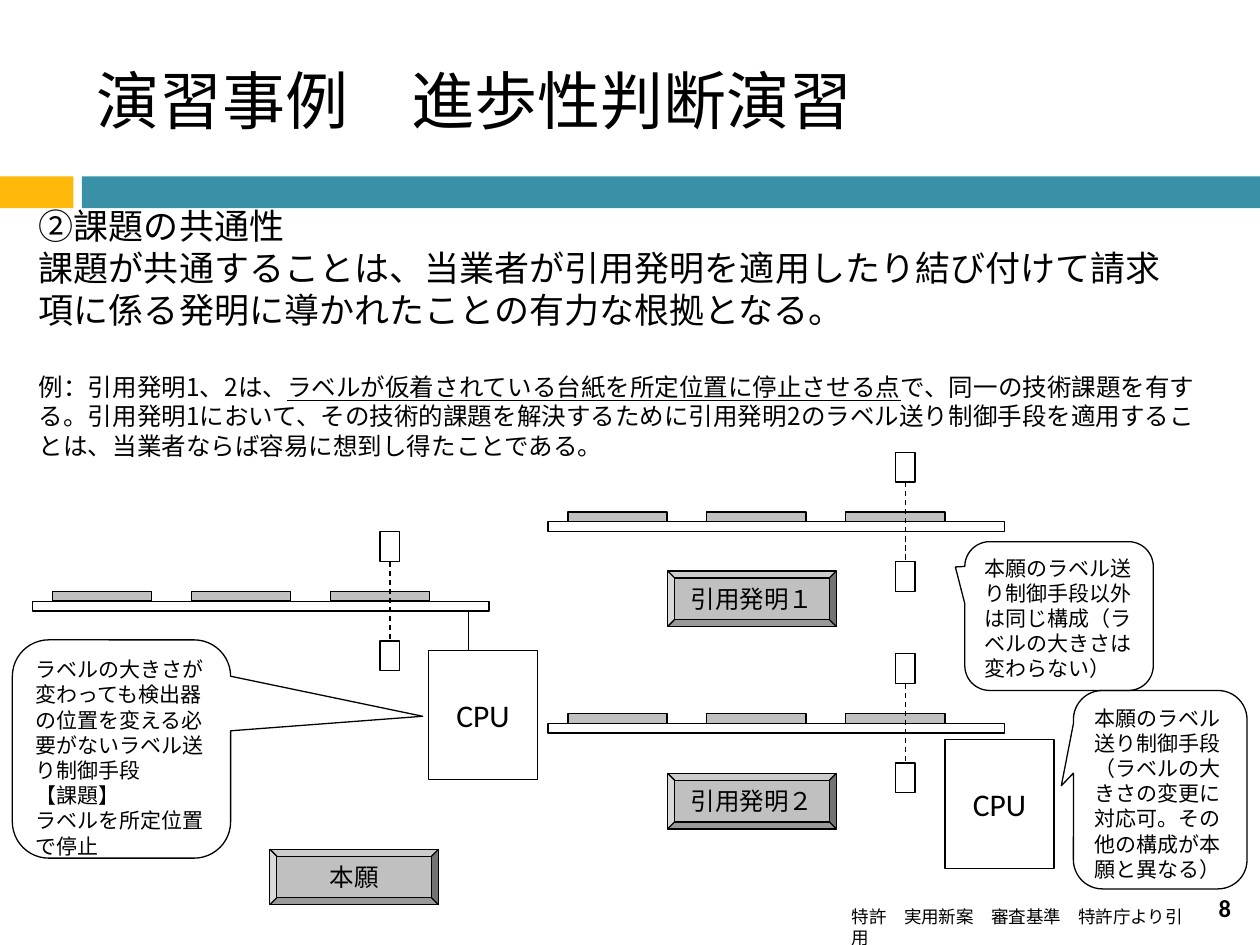
from typing import NamedTuple, Optional

from lxml import etree
from pptx import Presentation
from pptx import util as u
from pptx.dml.color import RGBColor
from pptx.enum import dml, shapes, text
from pptx.oxml.ns import qn

BLACK = RGBColor(0x00, 0x00, 0x00)
WHITE = RGBColor(0xFF, 0xFF, 0xFF)
SILVER = RGBColor(0xC0, 0xC0, 0xC0)
AMBER = RGBColor(0xFE, 0xB8, 0x0A)
TEAL = RGBColor(0x38, 0x91, 0xA7)
LATIN = "Calibri"
JAPANESE = "Noto Sans CJK JP"
CELL = u.Mm(2)
HAIRLINE = u.Pt(0.75)
KIND = shapes.MSO_SHAPE


class Box(NamedTuple):
    col: float
    row: float
    cols: float
    rows: float

    def emu(self) -> list[int]:
        return [round(cells * CELL) for cells in self]


class Point(NamedTuple):
    col: float
    row: float


class Callout(NamedTuple):
    box: Box
    tip: tuple[float, float]
    wording: str


class Plate(NamedTuple):
    kind: int
    box: Box
    fill: RGBColor
    wording: str
    size: int


RAILS = [Point(3.3, 60.6), Point(55.25, 52.6), Point(55.25, 72.9)]
PLATES = [
    Plate(KIND.RECTANGLE, Box(43.2, 65.55, 11, 13), WHITE, "CPU", 18),
    Plate(KIND.RECTANGLE, Box(95.25, 74.55, 11, 13), WHITE, "CPU", 18),
    Plate(KIND.BEVEL, Box(27.2, 85.6, 17, 5.6), SILVER, "本願", 14),
    Plate(KIND.BEVEL, Box(67.3, 57.55, 17, 5.6), SILVER, "引用発明１", 14),
    Plate(KIND.BEVEL, Box(67.3, 77.95, 17, 5.6), SILVER, "引用発明２", 14),
]
CALLOUTS = [
    Callout(
        Box(1.25, 64.5, 22, 22), (1.38, -0.15),
        "ラベルの大きさが変わっても検出器の位置を変える必要がないラベル送り制御手段\n"
        "【課題】\nラベルを所定位置で停止",
    ),
    Callout(
        Box(97.25, 54.6, 19, 15), (-0.55, -0.33),
        "本願のラベル送り制御手段以外は同じ構成（ラベルの大きさは変わらない）",
    ),
    Callout(
        Box(108.2, 69.6, 17.5, 20), (-0.57, -0.02),
        "本願のラベル送り制御手段\n"
        "（ラベルの大きさの変更に対応可。その他の構成が本願と異なる）",
    ),
]

deck = Presentation()
deck.slide_width, deck.slide_height = u.Inches(10), u.Inches(7.5)
slide = deck.slides.add_slide(deck.slide_layouts[6])


def style_run(run, size: float, font: str, bold: bool = False) -> None:
    run.font.size = u.Pt(size)
    run.font.name = font
    run.font.bold = bold
    run.font.color.rgb = BLACK
    east_asian = etree.SubElement(run._r.get_or_add_rPr(), qn("a:ea"))
    east_asian.set("typeface", JAPANESE)


def write(frame, wording: str, size: float, font: str = LATIN, align=text.PP_ALIGN.LEFT,
          anchor=text.MSO_ANCHOR.TOP, wrap: bool = True, bold: bool = False) -> None:
    frame.text = wording
    frame.word_wrap = wrap
    frame.vertical_anchor = anchor
    for paragraph in frame.paragraphs:
        paragraph.alignment = align
        for run in paragraph.runs:
            style_run(run, size, font, bold)


def add_block(kind: int, box: Box, fill: Optional[RGBColor] = None, outlined: bool = True):
    block = slide.shapes.add_shape(kind, *box.emu())
    block.shadow.inherit = False
    if fill is None:
        block.fill.background()
    else:
        block.fill.solid()
        block.fill.fore_color.rgb = fill
    if outlined:
        block.line.color.rgb = BLACK
        block.line.width = HAIRLINE
    else:
        block.line.fill.background()
    return block


def add_wire(start: Point, end: Point, dashed: bool = False) -> None:
    ends = [round(cells * CELL) for cells in (*start, *end)]
    wire = slide.shapes.add_connector(shapes.MSO_CONNECTOR.STRAIGHT, *ends)
    wire.line.color.rgb = BLACK
    wire.line.width = HAIRLINE
    if dashed:
        wire.line.dash_style = dml.MSO_LINE.DASH
    etree.SubElement(wire._element.spPr, qn("a:effectLst"))


def add_conveyor(rail: Point) -> None:
    add_block(KIND.RECTANGLE, Box(*rail, 46, 1))
    for step in range(3):
        add_block(KIND.RECTANGLE, Box(rail.col + 2 + 14 * step, rail.row - 1, 10, 1), SILVER)
    for offset in (-7, 4):
        add_block(KIND.RECTANGLE, Box(rail.col + 35, rail.row + offset, 2, 3), WHITE)
    beam = rail.col + 36
    add_wire(Point(beam, rail.row - 4), Point(beam, rail.row + 4), dashed=True)


def add_plate(plate: Plate) -> None:
    block = add_block(plate.kind, plate.box, plate.fill)
    write(block.text_frame, plate.wording, plate.size, align=text.PP_ALIGN.CENTER,
          anchor=text.MSO_ANCHOR.MIDDLE, wrap=False)


def add_callout(callout: Callout) -> None:
    balloon = add_block(KIND.ROUNDED_RECTANGULAR_CALLOUT, callout.box)
    for index, share in enumerate((*callout.tip, 0.167)):
        balloon.adjustments[index] = share
    write(balloon.text_frame, callout.wording, 12)


def add_words(box: Box, wording: str, size: float, **style):
    frame = slide.shapes.add_textbox(*box.emu()).text_frame
    write(frame, wording, size, **style)
    return frame


def add_explanation() -> None:
    frame = add_words(
        Box(2.67, 19.94, 119, 27),
        "②課題の共通性\n"
        "課題が共通することは、当業者が引用発明を適用したり結び付けて請求項に係る発明に"
        "導かれたことの有力な根拠となる。",
        20, font=JAPANESE,
    )
    example = frame.add_paragraph()
    example.space_before = u.Pt(24)
    for wording, underlined in (
        ("例：引用発明1、2は、", False),
        ("ラベルが仮着されている台紙を所定位置に停止させる点", True),
        ("で、同一の技術課題を有する。引用発明1において、その技術的課題を解決するために"
         "引用発明2のラベル送り制御手段を適用することは、当業者ならば容易に想到し得たことである。",
         False),
    ):
        run = example.add_run()
        run.text = wording
        style_run(run, 14, JAPANESE)
        run.font.underline = underlined


def main() -> None:
    add_block(KIND.RECTANGLE, Box(0, 17.78, 7.4, 3.2), AMBER, outlined=False)
    add_block(KIND.RECTANGLE, Box(8.25, 17.78, 118.75, 3.2), TEAL, outlined=False)
    for rail in RAILS:
        add_conveyor(rail)
    add_wire(Point(47.25, 65.55), Point(47.25, 61.6))
    for plate in PLATES:
        add_plate(plate)
    for callout in CALLOUTS:
        add_callout(callout)
    add_explanation()
    add_words(Box(8.5, 3.2, 113.3, 13.7), "演習事例　進歩性判断演習", 36,
              font=JAPANESE, anchor=text.MSO_ANCHOR.MIDDLE)
    add_words(Box(84.6, 90.7, 37.5, 3.4), "特許　実用新案　審査基準　特許庁より引用", 10)
    add_words(Box(120.1, 88.8, 6.7, 5.3), "8", 14, align=text.PP_ALIGN.CENTER,
              anchor=text.MSO_ANCHOR.MIDDLE, bold=True)
    deck.save("out.pptx")


if __name__ == "__main__":
    main()
